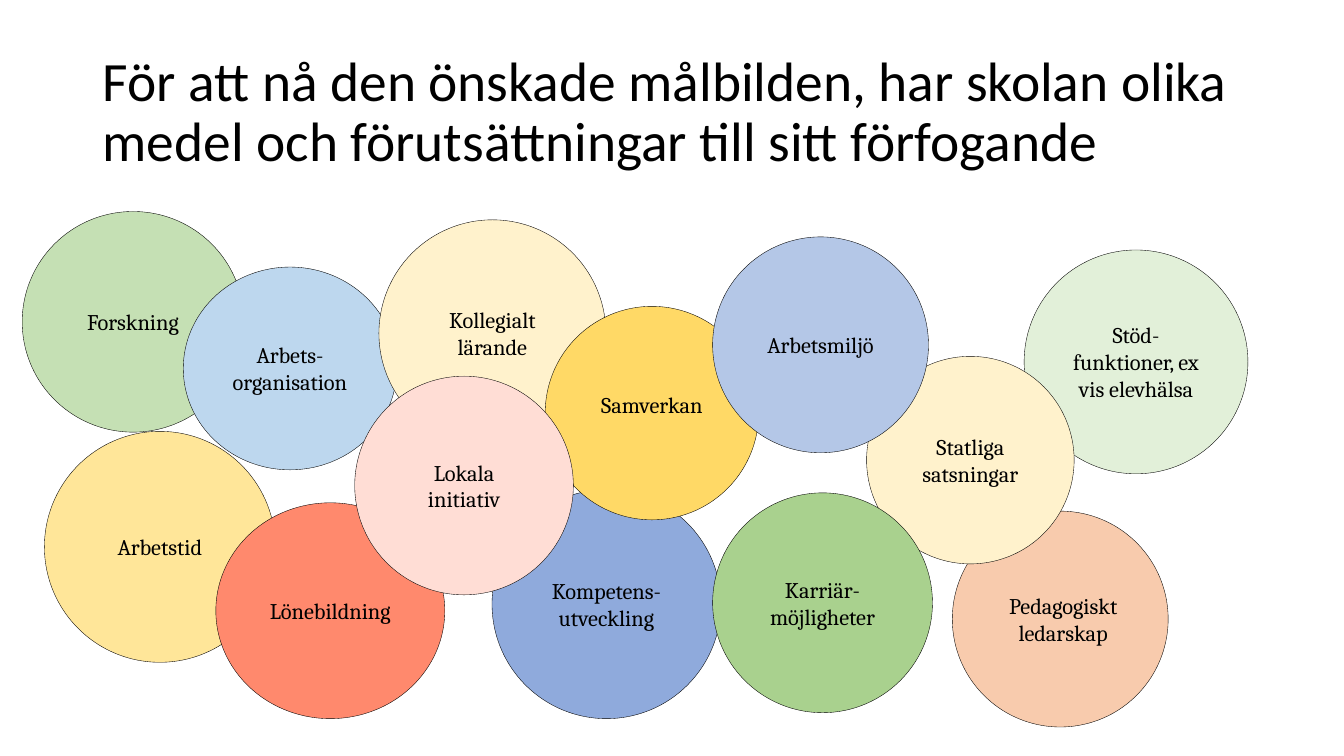
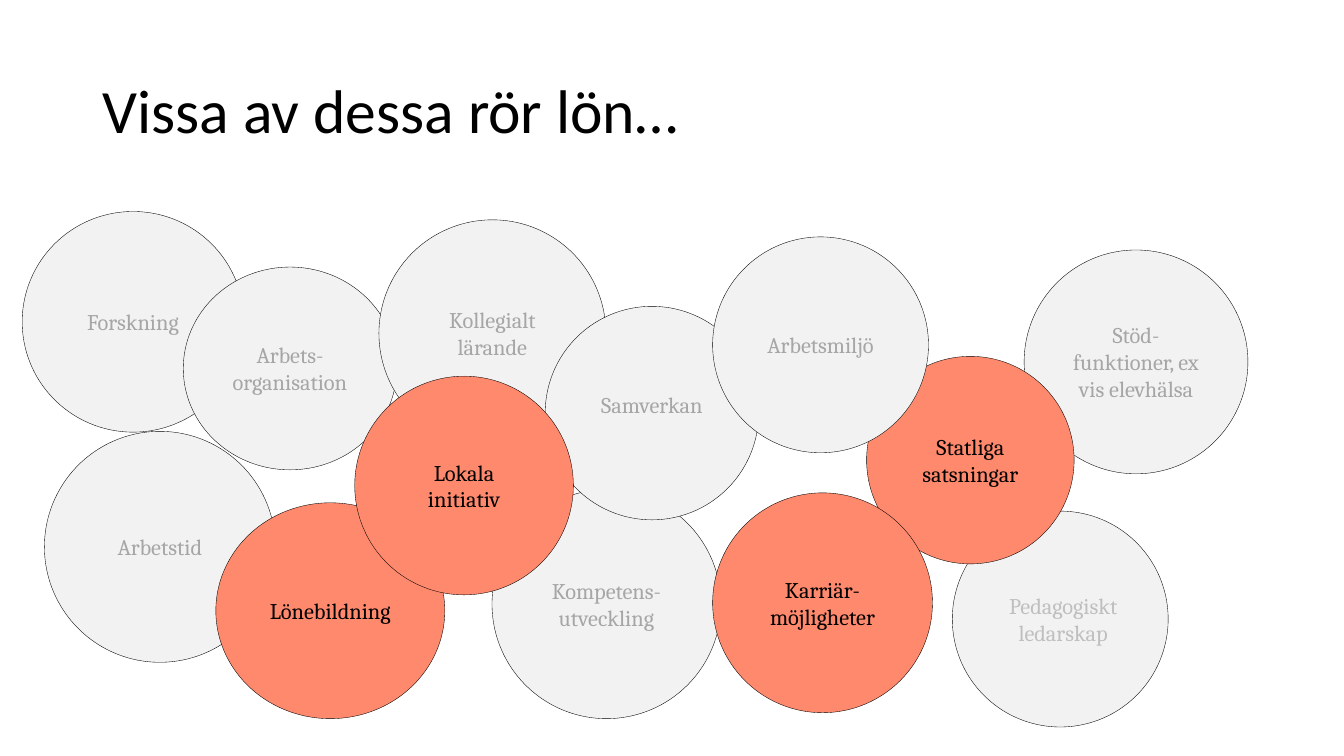
from pptx import Presentation
from pptx.dml.color import RGBColor
from pptx.enum.shapes import MSO_SHAPE
from pptx.enum.text import MSO_ANCHOR, PP_ALIGN
from pptx.util import Cm, Pt

BLACK = RGBColor(0x00, 0x00, 0x00)
GRAY = RGBColor(0xA6, 0xA6, 0xA6)
LIGHT_GRAY = RGBColor(0xBF, 0xBF, 0xBF)
PALE_GRAY = RGBColor(0xF2, 0xF2, 0xF2)
CORAL = RGBColor(0xFF, 0x89, 0x6D)
PINK = RGBColor(0xFF, 0xDD, 0xD5)
PEACH = RGBColor(0xF8, 0xCB, 0xAD)
CREAM = RGBColor(0xFF, 0xF2, 0xCC)
YELLOW = RGBColor(0xFF, 0xE6, 0x99)
GOLD = RGBColor(0xFF, 0xD9, 0x66)
PALE_GREEN = RGBColor(0xE2, 0xF0, 0xD9)
LIGHT_GREEN = RGBColor(0xC5, 0xE0, 0xB4)
GREEN = RGBColor(0xA9, 0xD1, 0x8E)
SKY = RGBColor(0xBD, 0xD7, 0xEE)
LIGHT_BLUE = RGBColor(0xB4, 0xC7, 0xE7)
BLUE = RGBColor(0x8F, 0xAA, 0xDC)

# Resources of the school, back to front: text, left, top, width, height (cm), colour
RESOURCES = [
    ("Forskning", 0.56, 5.33, 5.59, 5.56, LIGHT_GREEN),
    ("Arbetstid", 1.12, 10.87, 5.82, 5.82, YELLOW),
    ("Arbets-organisation", 4.62, 6.73, 5.38, 5.11, SKY),
    ("Kollegialt lärande", 9.55, 5.54, 5.72, 5.72, CREAM),
    ("Pedagogiskt ledarskap", 24, 12.88, 5.44, 5.44, PEACH),
    ("Kompetens-utveckling", 12.4, 12.34, 5.77, 5.77, BLUE),
    ("Stöd-funktioner, ex vis elevhälsa", 25.81, 6.3, 5.64, 5.64, PALE_GREEN),
    ("Statliga satsningar", 21.84, 8.98, 5.23, 5.23, CREAM),
    ("Lönebildning", 5.44, 12.67, 5.77, 5.44, CORAL),
    ("Karriär-möjligheter", 17.96, 12.42, 5.54, 5.54, GREEN),
    ("Samverkan", 13.74, 7.72, 5.38, 5.38, GOLD),
    ("Arbetsmiljö", 17.96, 5.97, 5.44, 5.44, LIGHT_BLUE),
    ("Lokala initiativ", 8.94, 9.48, 5.51, 5.51, PINK),
]
PAY_RELATED = {"Statliga satsningar", "Lönebildning",
               "Karriär-möjligheter", "Lokala initiativ"}

# Title, its size, and whether only the pay-related circles keep a colour
SLIDES = [
    ("För att nå den önskade målbilden, har skolan olika medel och "
     "förutsättningar till sitt förfogande", 39.6, False),
    ("Vissa av dessa rör lön…", 44, True),
]


def write(shape, text, *, font="Cambria", size=16, color=BLACK,
          align=PP_ALIGN.CENTER, spacing=1.0):
    frame = shape.text_frame
    frame.word_wrap = True
    frame.vertical_anchor = MSO_ANCHOR.MIDDLE
    paragraph = frame.paragraphs[0]
    paragraph.alignment = align
    paragraph.line_spacing = spacing
    run = paragraph.add_run()
    run.text = text
    run.font.name = font
    run.font.size = Pt(size)
    run.font.color.rgb = color


presentation = Presentation()
presentation.slide_width = Cm(33.87)
presentation.slide_height = Cm(19.05)

for heading, heading_size, pay_only in SLIDES:
    slide = presentation.slides.add_slide(presentation.slide_layouts[6])

    # Title
    title = slide.shapes.add_textbox(Cm(2.34), Cm(1.02), Cm(29.21), Cm(3.68))
    write(title, heading, font="Calibri", size=heading_size,
          align=PP_ALIGN.LEFT, spacing=0.9)

    # Overlapping circles
    for resource, left, top, width, height, fill in RESOURCES:
        text_color = BLACK
        if pay_only and resource in PAY_RELATED:
            fill = CORAL
        elif pay_only:
            fill = PALE_GRAY
            text_color = LIGHT_GRAY if resource == "Pedagogiskt ledarskap" else GRAY

        circle = slide.shapes.add_shape(
            MSO_SHAPE.OVAL, Cm(left), Cm(top), Cm(width), Cm(height))
        circle.shadow.inherit = False
        circle.fill.solid()
        circle.fill.fore_color.rgb = fill
        circle.line.color.rgb = BLACK
        circle.line.width = Pt(0.25)
        write(circle, resource, color=text_color)

        # Two labels sit slightly off centre
        if resource == "Samverkan":
            circle.text_frame.margin_bottom = Cm(0.56)
        elif resource == "Pedagogiskt ledarskap":
            circle.text_frame.margin_left = Cm(0.4)

presentation.save("out.pptx")
